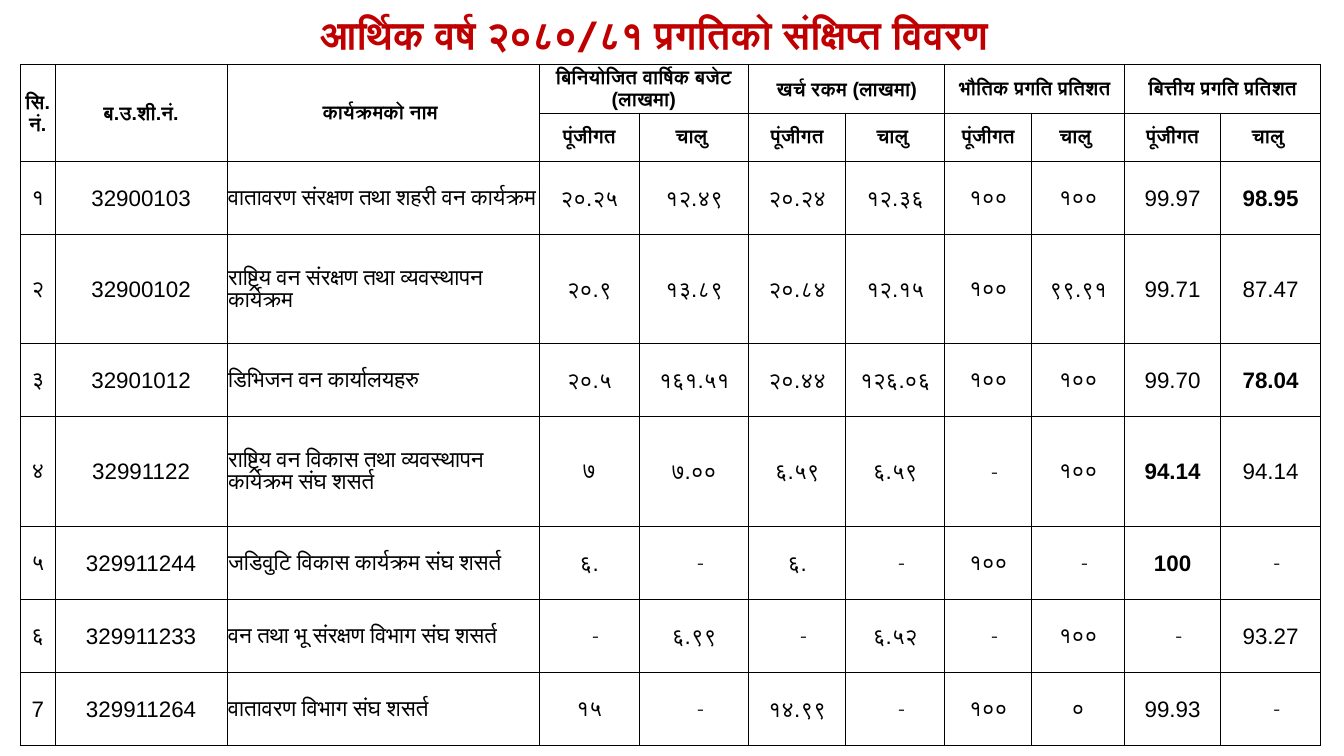
"""Build the slide summarising programme progress for fiscal year २०८०/८१."""
from typing import NamedTuple

from lxml import etree
from pptx import Presentation
from pptx.dml.color import RGBColor
from pptx.enum.text import MSO_ANCHOR, PP_ALIGN
from pptx.oxml.ns import qn
from pptx.util import Cm, Pt

CENTER, LEFT = PP_ALIGN.CENTER, PP_ALIGN.LEFT
MIDDLE = MSO_ANCHOR.MIDDLE
BLACK, RED = "000000", "C00000"
BORDER_SIDES = ("a:lnL", "a:lnR", "a:lnT", "a:lnB")
COLUMN_WIDTHS = (0.88, 4.33, 7.86, 2.54, 2.75, 2.44, 2.5, 2.19, 2.34, 2.42, 2.52)
HEADER_HEIGHT, LINE_HEIGHT, TALL_HEIGHT = 1.21, 1.84, 2.76
NAME_COLUMN = 2
CELL_MARGIN, DASH_INDENT = 0.03, 0.35


class Style(NamedTuple):
    size: float
    bold: bool = False
    font: str = "Arial"
    color: str = BLACK
    align: PP_ALIGN = CENTER


class Programme(NamedTuple):
    values: tuple[str, ...]
    height: float = LINE_HEIGHT
    bold_column: int | None = None


TITLE = Style(28, True, "Cabin", RED)
HEADING = Style(14, True)
VALUE = Style(16)

ROW_TITLES = ("सि.नं.", "ब.उ.शी.नं.", "कार्यक्रमको नाम ")
GROUP_TITLES = (
    "बिनियोजित वार्षिक बजेट (लाखमा)",
    "खर्च रकम (लाखमा)",
    "भौतिक प्रगति प्रतिशत",
    "बित्तीय प्रगति प्रतिशत",
)
BUDGET_KINDS = ("पूंजीगत", "चालु ")

PROGRAMMES = (
    Programme(("१", "32900103", "वातावरण संरक्षण तथा शहरी वन कार्यक्रम", "२०.२५", "१२.४९",
               "२०.२४", "१२.३६", "१००", "१००", "99.97", "98.95"), bold_column=10),
    Programme(("२", "32900102", "राष्ट्रिय वन संरक्षण तथा व्यवस्थापन कार्यक्रम", "२०.९", "१३.८९",
               "२०.८४", "१२.१५", "१००", "९९.९१", "99.71", "87.47"), TALL_HEIGHT),
    Programme(("३", "32901012", "डिभिजन वन कार्यालयहरु", "२०.५", "१६१.५१",
               "२०.४४", "१२६.०६", "१००", "१००", "99.70", "78.04"), bold_column=10),
    Programme(("४", "32991122", "राष्ट्रिय वन विकास तथा व्यवस्थापन कार्यक्रम संघ शसर्त", "७", "७.००",
               "६.५९", "६.५९", "-", "१००", "94.14", "94.14"), TALL_HEIGHT, 9),
    Programme(("५", "329911244", "जडिवुटि विकास कार्यक्रम संघ शसर्त", "६.", "-",
               "६.", "-", "१००", "-", "100", "-"), bold_column=9),
    Programme(("६", "329911233", "वन तथा भू संरक्षण विभाग संघ शसर्त", "-", "६.९९",
               "-", "६.५२", "-", "१००", "-", "93.27")),
    Programme(("7", "329911264", "वातावरण विभाग संघ शसर्त", "१५", "-",
               "१४.९९", "-", "१००", "०", "99.93", "-")),
)


def rgb(value: str) -> RGBColor:
    return RGBColor.from_string(value)


def write(frame, text: str, style: Style) -> None:
    paragraph = frame.paragraphs[0]
    paragraph.alignment = style.align
    run = paragraph.add_run()
    run.text = text
    run.font.name = style.font
    run.font.size = Pt(style.size)
    run.font.bold = style.bold
    run.font.color.rgb = rgb(style.color)


def format_cell(cell) -> None:
    cell.vertical_anchor = MIDDLE
    cell.margin_left = cell.margin_right = cell.margin_top = Cm(CELL_MARGIN)
    cell.margin_bottom = 0
    properties = cell._tc.get_or_add_tcPr()
    for side in BORDER_SIDES:
        border = etree.SubElement(properties, qn(side), w=str(Pt(0.5)))
        fill = etree.SubElement(border, qn("a:solidFill"))
        etree.SubElement(fill, qn("a:srgbClr"), val=BLACK)
    cell.fill.background()


def add_headings(table) -> None:
    for column, title in enumerate(ROW_TITLES):
        cell = table.cell(0, column)
        cell.merge(table.cell(1, column))
        write(cell.text_frame, title, HEADING)
    for group, title in enumerate(GROUP_TITLES):
        first = len(ROW_TITLES) + group * len(BUDGET_KINDS)
        cell = table.cell(0, first)
        cell.merge(table.cell(0, first + len(BUDGET_KINDS) - 1))
        write(cell.text_frame, title, HEADING)
        for offset, kind in enumerate(BUDGET_KINDS):
            write(table.cell(1, first + offset).text_frame, kind, HEADING)


def add_programme(table, row: int, programme: Programme) -> None:
    for column, value in enumerate(programme.values):
        cell = table.cell(row, column)
        style = VALUE._replace(bold=column == programme.bold_column)
        if column == NAME_COLUMN:
            style = style._replace(align=LEFT)
        if value == "-":
            style = style._replace(font="Cambria")
            cell.margin_left = Cm(DASH_INDENT)
        write(cell.text_frame, value, style)


def add_progress_table(slide) -> None:
    heights = [HEADER_HEIGHT] * 2 + [programme.height for programme in PROGRAMMES]
    table = slide.shapes.add_table(
        len(heights), len(COLUMN_WIDTHS), Cm(0.51), Cm(1.63),
        Cm(sum(COLUMN_WIDTHS)), Cm(sum(heights))).table
    table.first_row = table.horz_banding = False
    for column, width in zip(table.columns, COLUMN_WIDTHS):
        column.width = Cm(width)
    for row, height in zip(table.rows, heights):
        row.height = Cm(height)
    for cell in table.iter_cells():
        format_cell(cell)
    add_headings(table)
    for row, programme in enumerate(PROGRAMMES, start=2):
        add_programme(table, row, programme)


def add_title(slide) -> None:
    title = slide.shapes.add_textbox(Cm(0), Cm(0.13), Cm(33.25), Cm(1.45)).text_frame
    title.word_wrap = True
    title.vertical_anchor = MIDDLE
    write(title, "आर्थिक वर्ष २०८०/८१ प्रगतिको संक्षिप्त विवरण ", TITLE)


def main() -> None:
    presentation = Presentation()
    presentation.slide_width, presentation.slide_height = Cm(33.87), Cm(19.05)
    slide = presentation.slides.add_slide(presentation.slide_layouts[6])
    add_title(slide)
    add_progress_table(slide)
    presentation.save("out.pptx")


if __name__ == "__main__":
    main()
